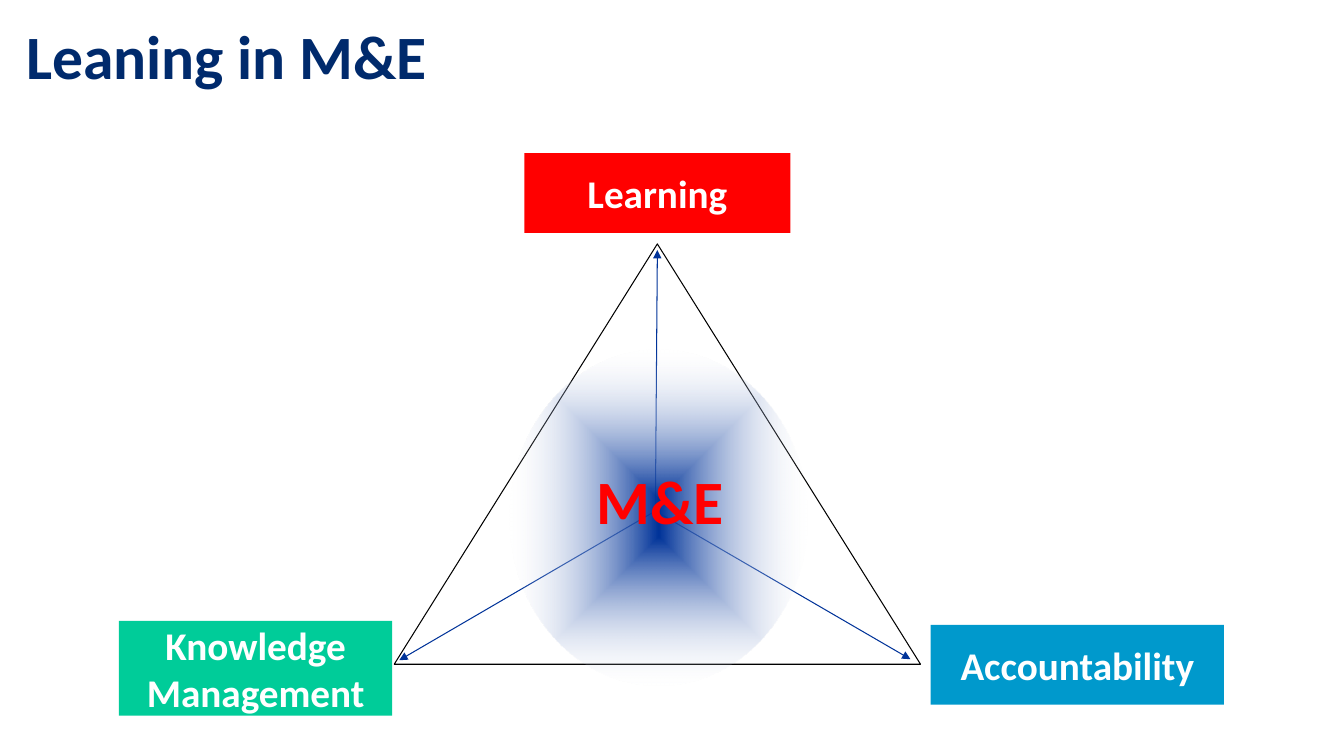
from dataclasses import dataclass

from lxml import etree
from pptx import Presentation
from pptx.dml.color import RGBColor
from pptx.enum.shapes import MSO_CONNECTOR as CONN, MSO_SHAPE as SHAPE
from pptx.enum.text import MSO_ANCHOR as ANCHOR, PP_ALIGN as ALIGN
from pptx.oxml import parse_xml
from pptx.oxml.ns import nsdecls, qn
from pptx.util import Inches, Pt


@dataclass(frozen=True)
class Theme:
    font: str = "Calibri"
    heading: int = 44
    label: int = 28
    line: float = 0.75
    navy: str = "002A6C"
    blue: str = "003399"
    mist: str = "EFF2F9"
    red: str = "FF0000"
    green: str = "00CC99"
    cyan: str = "0099CC"
    white: str = "FFFFFF"
    black: str = "000000"


THEME = Theme()


def rgb(color):
    return RGBColor.from_string(color)


def write(sp, text, size, color, align=ALIGN.CENTER, inset=0):
    tf = sp.text_frame
    tf.word_wrap = True
    tf.vertical_anchor = ANCHOR.MIDDLE
    tf.margin_left = tf.margin_right = Inches(inset)
    tf.margin_top = tf.margin_bottom = Inches(inset / 2)
    p = tf.paragraphs[0]
    p.text = text
    p.alignment = align
    p.font.name = THEME.font
    p.font.size = Pt(size)
    p.font.bold = True
    p.font.color.rgb = rgb(color)
    return p


def add_text(s, box, text, color, **layout):
    sp = s.shapes.add_textbox(*map(Inches, box))
    return write(sp, text, THEME.heading, color, **layout)


def add_plain_shape(s, kind, box):
    sp = s.shapes.add_shape(kind, *map(Inches, box))
    sp.shadow.inherit = False
    sp.line.fill.background()
    return sp


def add_label(s, box, text, fill):
    sp = add_plain_shape(s, SHAPE.RECTANGLE, box)
    sp.fill.solid()
    sp.fill.fore_color.rgb = rgb(fill)
    write(sp, text, THEME.label, THEME.white)


def add_triangle(s, box):
    sp = add_plain_shape(s, SHAPE.ISOSCELES_TRIANGLE, box)
    sp.fill.background()
    sp.line.color.rgb = rgb(THEME.black)
    sp.line.width = Pt(THEME.line)


def add_arrow(s, start, end):
    cx = s.shapes.add_connector(CONN.STRAIGHT, *map(Inches, start + end))
    cx.line.color.rgb = rgb(THEME.blue)
    cx.line.width = Pt(THEME.line)
    etree.SubElement(cx.line._get_or_add_ln(), qn("a:tailEnd"), type="triangle")
    etree.SubElement(cx._element.spPr, qn("a:effectLst"))


def add_glow(s, box):
    sp = add_plain_shape(s, SHAPE.OVAL, box)
    sp.fill.background()
    spPr = sp._element.spPr
    gradient = parse_xml(
        f'<a:gradFill {nsdecls("a")} rotWithShape="1"><a:gsLst>'
        f'<a:gs pos="0"><a:srgbClr val="{THEME.blue}"/></a:gs>'
        f'<a:gs pos="100000"><a:srgbClr val="{THEME.mist}">'
        '<a:alpha val="0"/></a:srgbClr></a:gs></a:gsLst>'
        '<a:path path="shape">'
        '<a:fillToRect l="50000" t="50000" r="50000" b="50000"/>'
        '</a:path></a:gradFill>'
    )
    spPr.replace(spPr.find(qn("a:noFill")), gradient)


def main():
    prs = Presentation()
    prs.slide_width, prs.slide_height = Inches(13.33), Inches(7.5)
    s = prs.slides.add_slide(prs.slide_layouts[6])

    title = add_text(s, (0.16, 0, 12.99, 1.18), "Leaning in M&E", THEME.navy,
                     align=ALIGN.LEFT, inset=0.1)
    title.line_spacing = 0.9

    add_label(s, (5.2, 1.52, 2.64, 0.79), "Learning", THEME.red)
    add_label(s, (1.18, 6.16, 2.71, 0.94), "Knowledge Management", THEME.green)
    add_triangle(s, (3.91, 2.42, 5.22, 4.17))
    for tip in ((3.96, 6.55), (6.52, 2.48), (9.03, 6.54)):
        add_arrow(s, (6.5, 5.07), tip)
    add_glow(s, (5.05, 3.47, 2.96, 3.33))
    add_text(s, (5.12, 4.43, 2.85, 1.05), "M&E", THEME.red)
    add_label(s, (9.23, 6.2, 2.91, 0.79), "Accountability", THEME.cyan)

    prs.save("out.pptx")


if __name__ == "__main__":
    main()
